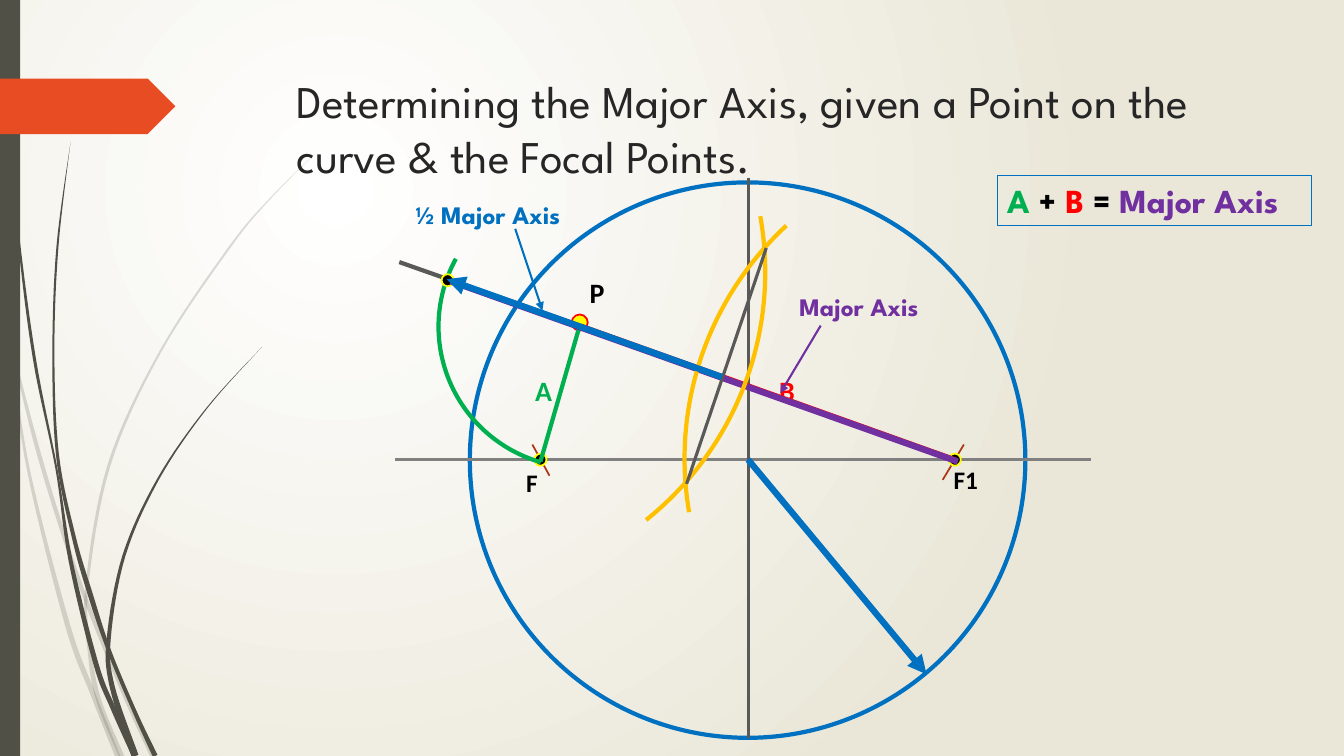
from math import hypot

from lxml.etree import SubElement
from pptx import Presentation
from pptx.dml.color import RGBColor
from pptx.enum.shapes import MSO_CONNECTOR, MSO_SHAPE
from pptx.enum.text import MSO_ANCHOR, MSO_AUTO_SIZE, PP_ALIGN
from pptx.oxml.ns import qn
from pptx.util import Emu, Pt

PX = 9144  # 100 px to the inch
HEADING, LETTERS = "League Spartan", "Calibri"
BLUE, PURPLE, GREEN, RED = "0070C0", "7030A0", "00B050", "FF0000"
GOLD, YELLOW, BLACK, GRAY = "FFC000", "FFFF00", "000000", "595959"
OLIVE, ORANGE, RUST = "505046", "E84C22", "AC3819"

# Grass blades: points along the middle as (x, y, thickness)
PALE_BLADES = [
    [(312, 153, 0), (268, 197, 1), (228, 245, 2), (159, 349, 2), (108, 462, 3),
     (86, 584, 3), (89, 646, 4), (98, 695, 5), (121, 751, 5)],
    [(0, 290, 4), (10, 348, 2), (29, 470, 3), (67, 620, 5), (92, 688, 5),
     (117, 751, 5)],
    [(14, 345, 0), (16, 361, 2), (36, 441, 4), (60, 521, 4), (87, 600, 4),
     (125, 693, 4), (152, 751, 5)],
]
DARK_BLADES = [
    [(4, 0, 1), (7, 110, 1), (18, 232, 2), (34, 355, 3), (56, 465, 2),
     (70, 556, 4), (95, 658, 5), (112, 702, 5), (134, 750, 6)],
    [(70, 141, 0), (57, 245, 2), (53, 349, 2), (57, 451, 3), (73, 532, 4),
     (90, 591, 5), (108, 645, 4), (134, 707, 4), (154, 750, 5)],
    [(260, 344, 0), (205, 405, 1), (157, 475, 2), (123, 551, 3),
     (108, 632, 4), (111, 680, 5), (134, 750, 7)],
]


def px(*lengths):
    return [Emu(round(length * PX)) for length in lengths]


def color(hex_string):
    return RGBColor.from_string(hex_string)


def paint(shape, fill=None, line=None, width=1.25):
    shape.shadow.inherit = False
    if fill:
        shape.fill.solid()
        shape.fill.fore_color.rgb = color(fill)
    else:
        shape.fill.background()
    if line:
        shape.line.color.rgb = color(line)
        shape.line.width = Pt(width)
    else:
        shape.line.fill.background()
    return shape


def add_preset(slide, preset, box, **style):
    return paint(slide.shapes.add_shape(preset, *px(*box)), **style)


def add_dot(slide, x, y, size=12, fill=BLACK, line=YELLOW):
    box = (x - size / 2, y - size / 2, size, size)
    add_preset(slide, MSO_SHAPE.OVAL, box, fill=fill, line=line)


def add_arc(slide, box, start, end, line):
    arc = add_preset(slide, MSO_SHAPE.ARC, box, line=line, width=3)
    for index, degrees in enumerate((start, end)):
        arc.adjustments[index] = degrees * 0.6


def add_line(slide, start, end, line, width, arrow=False):
    connector = slide.shapes.add_connector(
        MSO_CONNECTOR.STRAIGHT, *px(*start, *end))
    connector.line.color.rgb = color(line)
    connector.line.width = Pt(width)
    if arrow:
        SubElement(connector.line._get_or_add_ln(), qn("a:tailEnd"), type="triangle")
    SubElement(connector._element.spPr, qn("a:effectLst"))


def write(shape, *parts, font=HEADING, size=18, bold=True):
    """Fill a shape with (text, colour) parts on one left-aligned paragraph."""
    frame = shape.text_frame
    frame.word_wrap = True
    frame.auto_size = MSO_AUTO_SIZE.NONE
    frame.vertical_anchor = MSO_ANCHOR.TOP
    paragraph = frame.paragraphs[0]
    paragraph.alignment = PP_ALIGN.LEFT
    for text, hex_string in parts:
        run = paragraph.add_run()
        run.text = text
        run.font.name, run.font.size, run.font.bold = font, Pt(size), bold
        run.font.color.rgb = color(hex_string)


def add_label(slide, box, text, hex_string, **style):
    write(slide.shapes.add_textbox(*px(*box)), (text, hex_string), **style)


def smooth(points, steps=8):
    """Pass a Catmull-Rom curve through the points."""
    padded = [points[0], *points, points[-1]]
    curve = []
    for a, b, c, d in zip(padded, padded[1:], padded[2:], padded[3:]):
        for t in (step / steps for step in range(steps)):
            curve.append([
                (2 * q + (r - p) * t + (2 * p - 5 * q + 4 * r - s) * t ** 2
                 + (3 * q - p - 3 * r + s) * t ** 3) / 2
                for p, q, r, s in zip(a, b, c, d)])
    return curve + [points[-1]]


def add_blade(slide, points, alpha=None):
    curve = smooth(points)
    left, right = [], []
    for index, (x, y, thickness) in enumerate(curve):
        before, after = curve[max(index - 1, 0)], curve[min(index + 1, len(curve) - 1)]
        dx, dy = after[0] - before[0], after[1] - before[1]
        reach = thickness / 2 / hypot(dx, dy)
        left.append(px(x - dy * reach, y + dx * reach))
        right.append(px(x + dy * reach, y - dx * reach))
    outline = left + right[::-1]
    builder = slide.shapes.build_freeform(*outline[0])
    builder.add_line_segments(outline[1:], close=True)
    blade = paint(builder.convert_to_shape(), fill=OLIVE)
    if alpha:
        tone = blade._element.spPr.find(qn("a:solidFill")).find(qn("a:srgbClr"))
        SubElement(tone, qn("a:alpha"), val=str(alpha * 1000))


def set_background(slide):
    fill = slide.background.fill
    fill.gradient()
    for stop, hex_string in zip(fill.gradient_stops, ("FFFFFF", "EAE7D8")):
        stop.color.rgb = color(hex_string)
    gradient = slide.element.find(".//" + qn("a:gradFill"))
    gradient.remove(gradient.find(qn("a:lin")))
    circle = SubElement(gradient, qn("a:path"))
    circle.set("path", "circle")
    SubElement(circle, qn("a:fillToRect"), l="50000", t="50000", r="100000", b="100000")


def add_decoration(slide):
    set_background(slide)
    for blade in PALE_BLADES:
        add_blade(slide, blade, alpha=20)
    for blade in DARK_BLADES:
        add_blade(slide, blade)
    add_preset(slide, MSO_SHAPE.RECTANGLE, (0, 0, 20, 750), fill=OLIVE)
    add_preset(slide, MSO_SHAPE.PENTAGON, (0, 78, 174, 55), fill=ORANGE)


def add_title(slide):
    title = slide.shapes.title
    title.left, title.top, title.width, title.height = px(284, 68, 975, 113)
    text = "Determining the Major Axis, given a Point on the curve & the Focal Points."
    write(title, (text, "262626"), size=32.4, bold=False)


def add_construction(slide):
    # Circle, its axes and the focal points
    add_preset(slide, MSO_SHAPE.OVAL, (466, 181, 551, 551), line=BLUE, width=3)
    add_line(slide, (392, 456), (1082, 456), "808080", 2.25)
    add_line(slide, (742, 177), (742, 732), GRAY, 2.25)
    add_line(slide, (528, 441), (545, 472), RUST, 1.25)
    add_line(slide, (956, 441), (935, 476), RUST, 1.25)
    for focus_x in (536, 947):
        add_dot(slide, focus_x, 456)
    add_label(slide, (512, 459, 34, 40), "F", BLACK, font=LETTERS)
    add_label(slide, (936, 456, 54, 40), "F1", BLACK, font=LETTERS)
    add_line(slide, (742, 456), (919, 669), BLUE, 4.5, arrow=True)

    # Point on the curve and its distances to the foci
    add_dot(slide, 575, 320, size=16, fill=YELLOW, line=RED)
    add_label(slide, (575, 268, 37, 44), "P", BLACK, font=LETTERS, size=20)
    add_line(slide, (536, 458), (575, 323), GREEN, 3)
    add_line(slide, (576, 323), (948, 456), RED, 3)
    add_label(slide, (521, 366, 40, 44), "A", GREEN, font=LETTERS, size=20)
    add_label(slide, (763, 366, 40, 44), "B", RED, font=LETTERS, size=20)

    # Distance A swung round onto the extended line
    add_arc(slide, (435, 184, 280, 280), 106, 208.7, GREEN)
    add_line(slide, (575, 323), (396, 260), GRAY, 3)
    add_dot(slide, 444, 278)
    add_line(slide, (447, 279), (950, 458), PURPLE, 4.5)
    add_label(slide, (783, 284, 147, 40), "Major Axis", PURPLE)
    add_line(slide, (814, 323), (774, 390), PURPLE, 1.5, arrow=True)

    # Bisector and half of the major axis
    add_arc(slide, (129, -45, 630, 630), 349.86, 51.33, GOLD)
    add_arc(slide, (679, 140, 630, 630), 170.28, 227.2, GOLD)
    add_line(slide, (681, 480), (760, 246), GRAY, 2.25)
    add_line(slide, (716, 374), (443, 277), BLUE, 4.5, arrow=True)
    formula = add_preset(slide, MSO_SHAPE.RECTANGLE, (989, 174, 312, 50), line=BLUE, width=0.75)
    write(formula, ("A ", GREEN), ("+ ", BLACK), ("B ", RED), ("= ", BLACK),
          ("Major Axis", PURPLE), size=24)
    add_label(slide, (402, 193, 176, 40), "½ Major Axis", BLUE)
    add_line(slide, (511, 227), (538, 308), BLUE, 1.5, arrow=True)


def main():
    presentation = Presentation()
    presentation.slide_width, presentation.slide_height = px(1333, 750)
    slide = presentation.slides.add_slide(presentation.slide_layouts[5])
    add_decoration(slide)
    add_title(slide)
    add_construction(slide)
    presentation.save("out.pptx")


if __name__ == "__main__":
    main()
